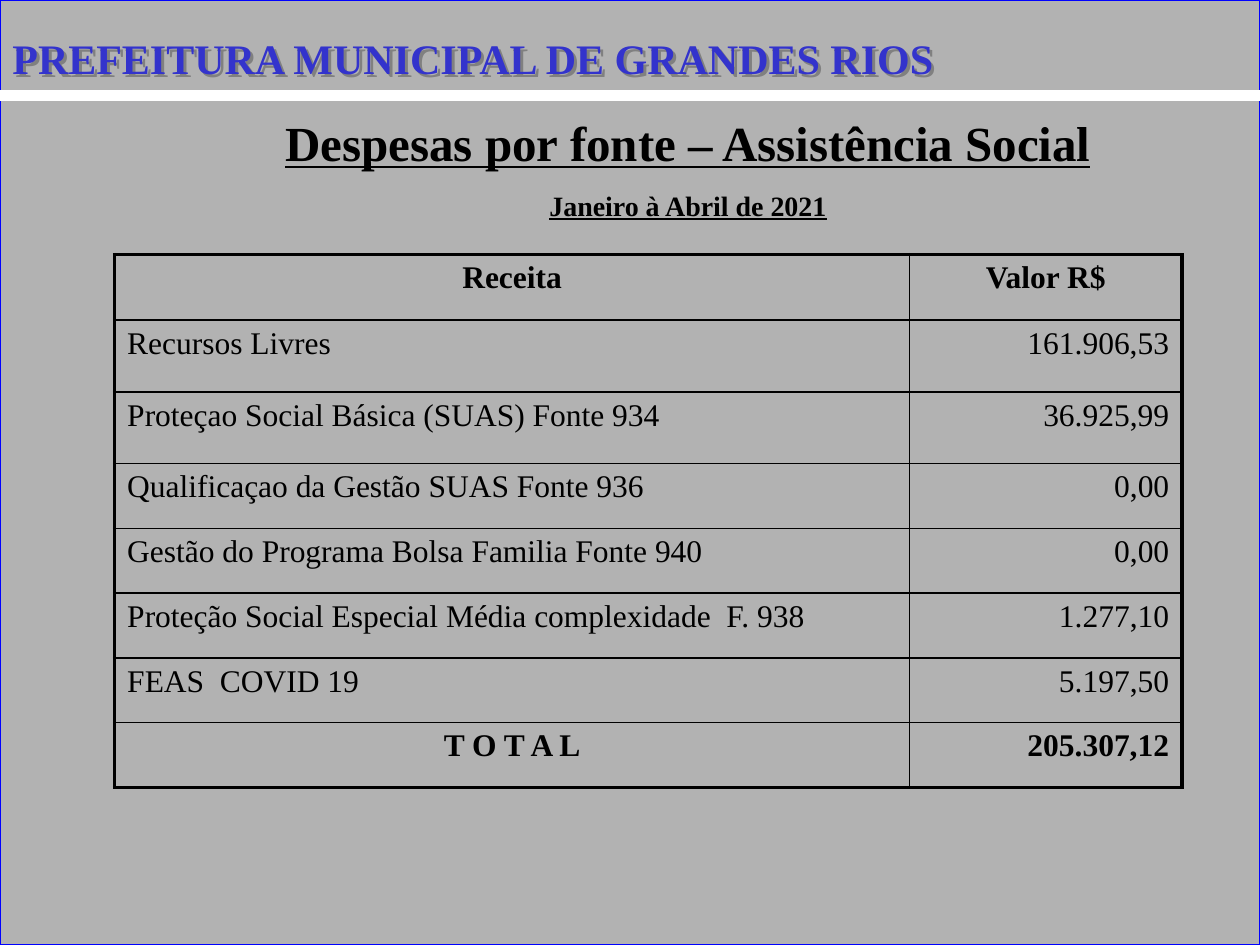
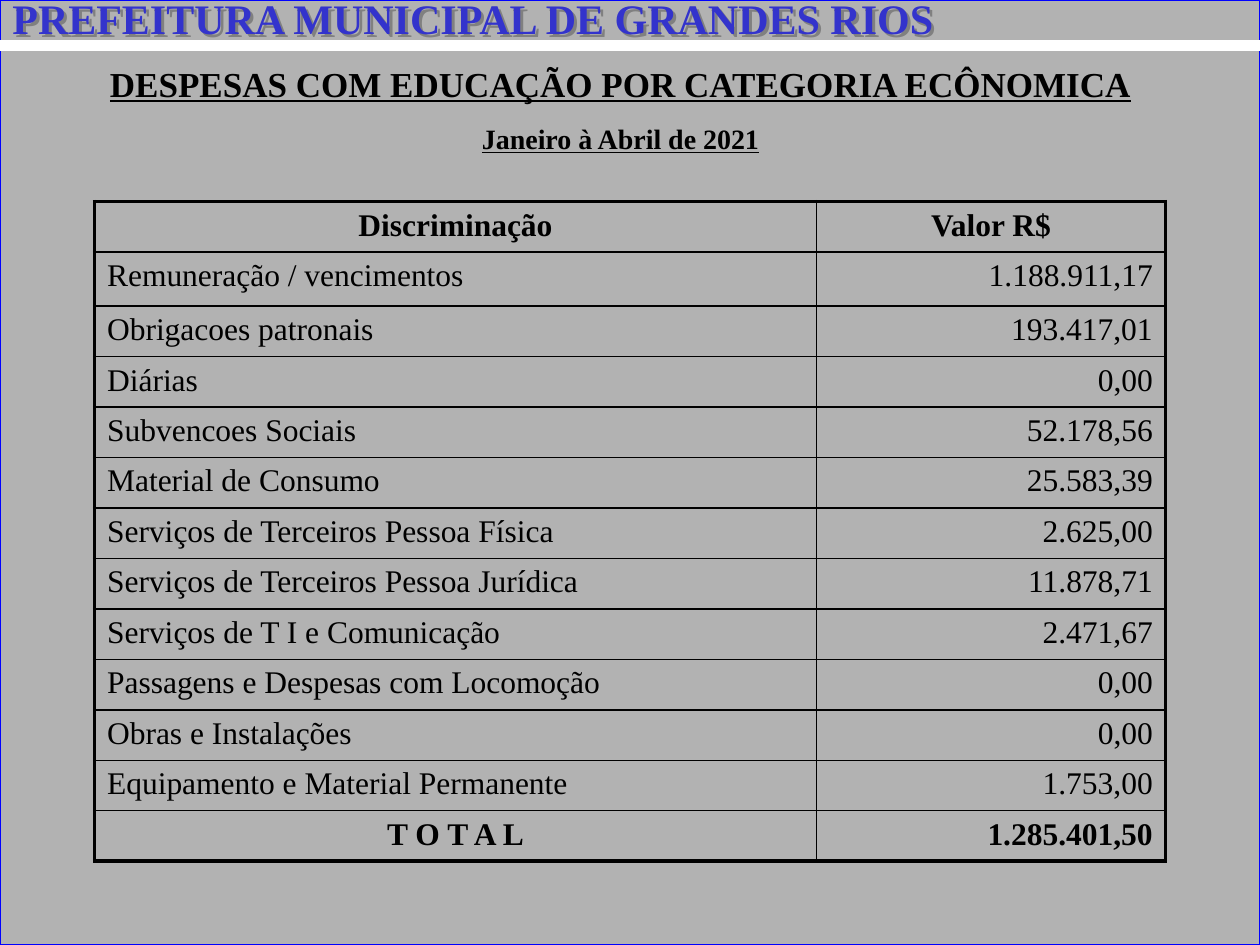
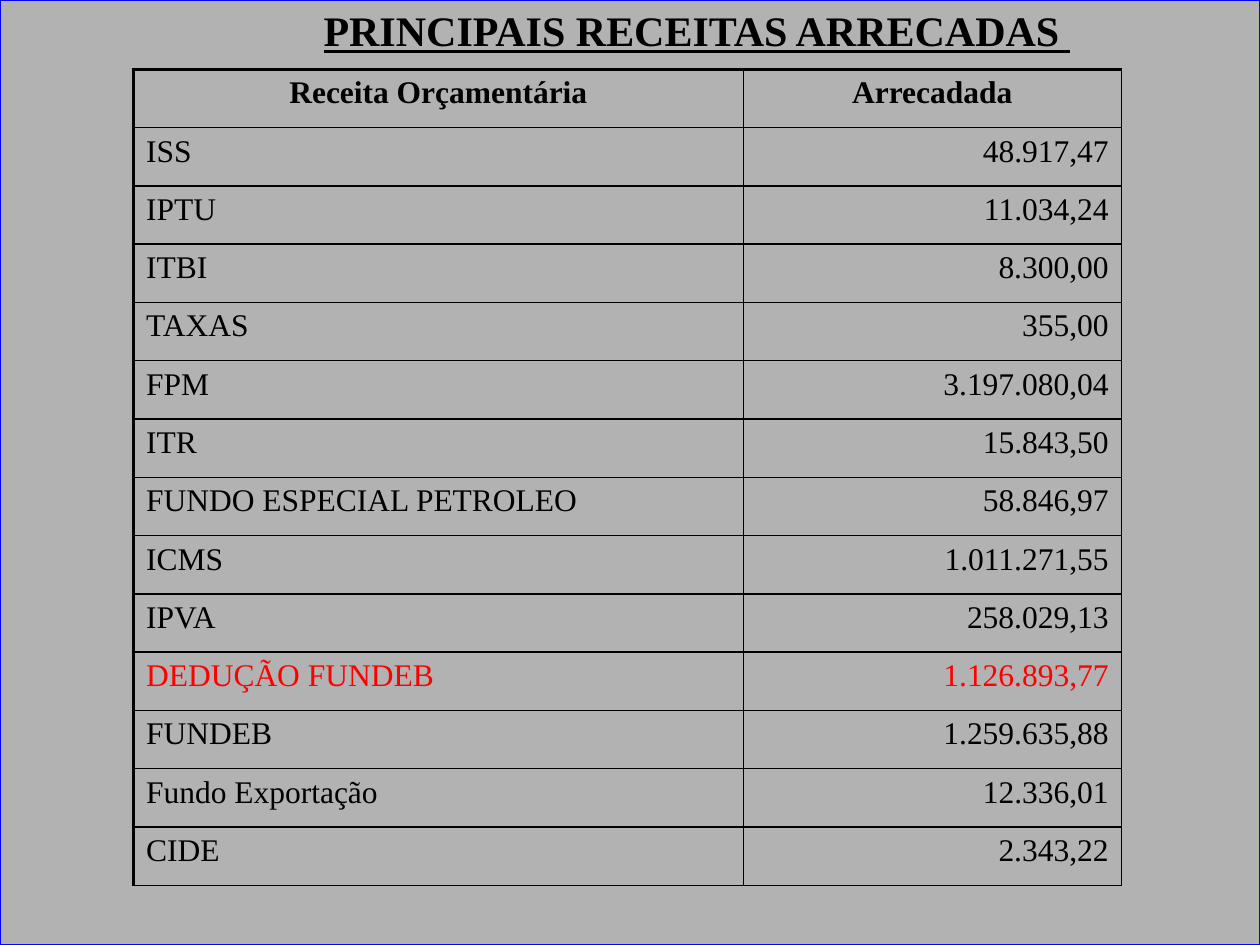
from dataclasses import dataclass

from lxml import etree
from pptx import Presentation
from pptx.dml.color import RGBColor
from pptx.enum.shapes import MSO_CONNECTOR, MSO_SHAPE
from pptx.enum.text import PP_ALIGN
from pptx.oxml.ns import qn
from pptx.util import Inches, Pt

RECT, STRAIGHT = MSO_SHAPE.RECTANGLE, MSO_CONNECTOR.STRAIGHT
LEFT, CENTER, RIGHT = PP_ALIGN.LEFT, PP_ALIGN.CENTER, PP_ALIGN.RIGHT

FONT = "Times New Roman"
BLACK = RGBColor(0x00, 0x00, 0x00)
WHITE = RGBColor(0xFF, 0xFF, 0xFF)
RED = RGBColor(0xFF, 0x00, 0x00)
GRAY = RGBColor(0xB2, 0xB2, 0xB2)
SHADOW = RGBColor(0x80, 0x80, 0x80)
FRAME_BLUE = RGBColor(0x00, 0x00, 0xFF)
HEADER_BLUE = RGBColor(0x33, 0x33, 0xCC)

SLIDE_W, SLIDE_H = Inches(10), Inches(7.5)
HEADER = "PREFEITURA MUNICIPAL DE GRANDES RIOS"
PERIOD = "Janeiro à Abril de 2021"
TOTAL = "T O T A L"
THICK, THIN = Pt(2.25), Pt(1)


@dataclass(frozen=True)
class Box:
    left: float
    top: float
    width: float
    height: float

    def emu(self) -> tuple:
        return tuple(Inches(v) for v in (self.left, self.top, self.width, self.height))


@dataclass(frozen=True)
class ValueTable:
    """Two-column table; rows after first_heights share the remaining height."""
    box: Box
    label_width: float
    first_heights: tuple
    rows: tuple
    closed: bool = True  # thick right and bottom edges
    highlight: str = ""


SOCIAL = ValueTable(Box(0.91, 2.02, 8.47, 4.23), 6.31, (0.52, 0.57, 0.57), (
    ("Receita", "Valor R$"),
    ("Recursos Livres", "161.906,53"),
    ("Proteçao Social Básica (SUAS) Fonte 934", "36.925,99"),
    ("Qualificaçao da Gestão SUAS Fonte 936", "0,00"),
    ("Gestão do Programa Bolsa Familia Fonte 940", "0,00"),
    ("Proteção Social Especial Média complexidade  F. 938", "1.277,10"),
    ("FEAS  COVID 19", "5.197,50"),
    (TOTAL, "205.307,12"),
))
EDUCATION = ValueTable(Box(0.75, 1.6, 8.5, 5.23), 5.73, (0.4, 0.43), (
    ("Discriminação", "Valor R$"),
    ("Remuneração / vencimentos", "1.188.911,17"),
    ("Obrigacoes patronais", "193.417,01"),
    ("Diárias", "0,00"),
    ("Subvencoes Sociais", "52.178,56"),
    ("Material de Consumo", "25.583,39"),
    ("Serviços de Terceiros Pessoa Física", "2.625,00"),
    ("Serviços de Terceiros Pessoa Jurídica", "11.878,71"),
    ("Serviços de T I e Comunicação", "2.471,67"),
    ("Passagens e Despesas com Locomoção", "0,00"),
    ("Obras e Instalações", "0,00"),
    ("Equipamento e Material Permanente", "1.753,00"),
    (TOTAL, "1.285.401,50"),
))
REVENUE = ValueTable(Box(1.06, 0.55, 7.84, 6.48), 4.84, (), (
    ("Receita Orçamentária", "Arrecadada"),
    ("ISS", "48.917,47"),
    ("IPTU", "11.034,24"),
    ("ITBI", "8.300,00"),
    ("TAXAS", "355,00"),
    ("FPM", "3.197.080,04"),
    ("ITR", "15.843,50"),
    ("FUNDO ESPECIAL PETROLEO", "58.846,97"),
    ("ICMS", "1.011.271,55"),
    ("IPVA", "258.029,13"),
    ("DEDUÇÃO FUNDEB", "1.126.893,77"),
    ("FUNDEB", "1.259.635,88"),
    ("Fundo Exportação", "12.336,01"),
    ("CIDE", "2.343,22"),
), closed=False, highlight="DEDUÇÃO FUNDEB")


def style(p, text: str, size: float, color=BLACK, bold=True, underline=None, align=LEFT) -> None:
    p.text = text
    p.alignment = align
    font = p.font
    font.name, font.size, font.bold, font.underline = FONT, Pt(size), bold, underline
    font.color.rgb = color


def space_before(p, percent: int) -> None:
    """Set the space before as a share of the line height."""
    spacing = etree.SubElement(p._p.get_or_add_pPr(), qn("a:spcBef"))
    etree.SubElement(spacing, qn("a:spcPct"), val=str(percent * 1000))


def add_text_frame(s, box: Box):
    sp = s.shapes.add_textbox(*box.emu())
    sp.text_frame.word_wrap = True
    return sp, sp.text_frame


def add_base(prs):
    s = prs.slides.add_slide(prs.slide_layouts[6])
    sp = s.shapes.add_shape(RECT, 0, 0, SLIDE_W, SLIDE_H)
    sp.shadow.inherit = False
    sp.fill.solid()
    sp.fill.fore_color.rgb = GRAY
    sp.line.color.rgb = FRAME_BLUE
    sp.line.width = Pt(0.75)
    return s


def add_rule(s, y: float) -> None:
    rule = s.shapes.add_connector(STRAIGHT, 0, Inches(y), SLIDE_W, Inches(y))
    rule.line.color.rgb = WHITE
    rule.line.width = Pt(6)
    etree.SubElement(rule._element.spPr, qn("a:effectLst"))


def add_header(s, top: float) -> None:
    sp, tf = add_text_frame(s, Box(0, top, 9.49, 0.5))
    style(tf.paragraphs[0], HEADER, 24, HEADER_BLUE)
    space_before(tf.paragraphs[0], 50)
    effects = etree.SubElement(sp._element.spPr, qn("a:effectLst"))
    shadow = etree.SubElement(effects, qn("a:outerShdw"), dist=str(Pt(2.4)), dir="2700000")
    etree.SubElement(shadow, qn("a:srgbClr"), val=str(SHADOW))


def add_heading(s, box: Box, title: str, size: float) -> None:
    """Write the underlined title with the period below it."""
    _, tf = add_text_frame(s, box)
    for p, text, points in ((tf.paragraphs[0], title, size), (tf.add_paragraph(), PERIOD, 16)):
        style(p, text, points, underline=True, align=CENTER)
        p.line_spacing = 1.5
        pPr = p._p.get_or_add_pPr()
        pPr.set("marL", str(Inches(0.5)))
        pPr.set("indent", str(-Inches(0.5)))


def set_borders(cell, **widths: int) -> None:
    tcPr = cell._tc.get_or_add_tcPr()
    for side, width in widths.items():
        ln = etree.SubElement(tcPr, qn(f"a:ln{side}"), w=str(width))
        fill = etree.SubElement(ln, qn("a:solidFill"))
        etree.SubElement(fill, qn("a:srgbClr"), val=str(BLACK))


def add_value_table(s, spec_: ValueTable) -> None:
    rows, box = spec_.rows, spec_.box
    last = len(rows) - 1
    table = s.shapes.add_table(len(rows), 2, *box.emu()).table
    table.first_row = table.horz_banding = False
    table.columns[0].width = Inches(spec_.label_width)
    table.columns[1].width = Inches(box.width - spec_.label_width)
    first = spec_.first_heights
    shared = (box.height - sum(first)) / (len(rows) - len(first))
    edge = THICK if spec_.closed else THIN
    for i, row in enumerate(rows):
        table.rows[i].height = Inches(first[i] if i < len(first) else shared)
        label = row[0]
        strong = i == 0 or label == TOTAL
        color = RED if label == spec_.highlight else BLACK
        aligns = (CENTER if strong else LEFT, CENTER if i == 0 else RIGHT)
        for j, (text, align) in enumerate(zip(row, aligns)):
            cell = table.cell(i, j)
            p = cell.text_frame.paragraphs[0]
            style(p, text, 18, color, strong, align=align)
            space_before(p, 20)
            set_borders(cell,
                        L=THICK if j == 0 else THIN,
                        R=edge if j == 1 else THIN,
                        T=THICK if i == 0 else THIN,
                        B=edge if i == last else THIN)
            cell.fill.background()


def add_expense_slide(prs, rule_y: float, header_top: float, heading: Box,
                      title: str, size: float, table: ValueTable) -> None:
    s = add_base(prs)
    add_rule(s, rule_y)
    add_heading(s, heading, title, size)
    add_header(s, header_top)
    add_value_table(s, table)


def add_revenue_slide(prs) -> None:
    s = add_base(prs)
    add_value_table(s, REVENUE)
    _, tf = add_text_frame(s, Box(1.06, -0.01, 8.94, 1.1))
    p = tf.paragraphs[0]
    style(p, "PRINCIPAIS RECEITAS ARRECADAS ", 24, underline=True, align=CENTER)
    space_before(p, 50)


def main() -> None:
    prs = Presentation()
    prs.slide_width, prs.slide_height = SLIDE_W, SLIDE_H
    add_expense_slide(prs, 0.76, 0.21, Box(1.42, 0.61, 8.08, 5.81),
                      "Despesas por fonte – Assistência Social", 28, SOCIAL)
    add_expense_slide(prs, 0.36, -0.11, Box(0.12, 0.28, 9.61, 1.7),
                      "DESPESAS COM EDUCAÇÃO POR CATEGORIA ECÔNOMICA", 20, EDUCATION)
    add_revenue_slide(prs)
    prs.save("out.pptx")


if __name__ == "__main__":
    main()
